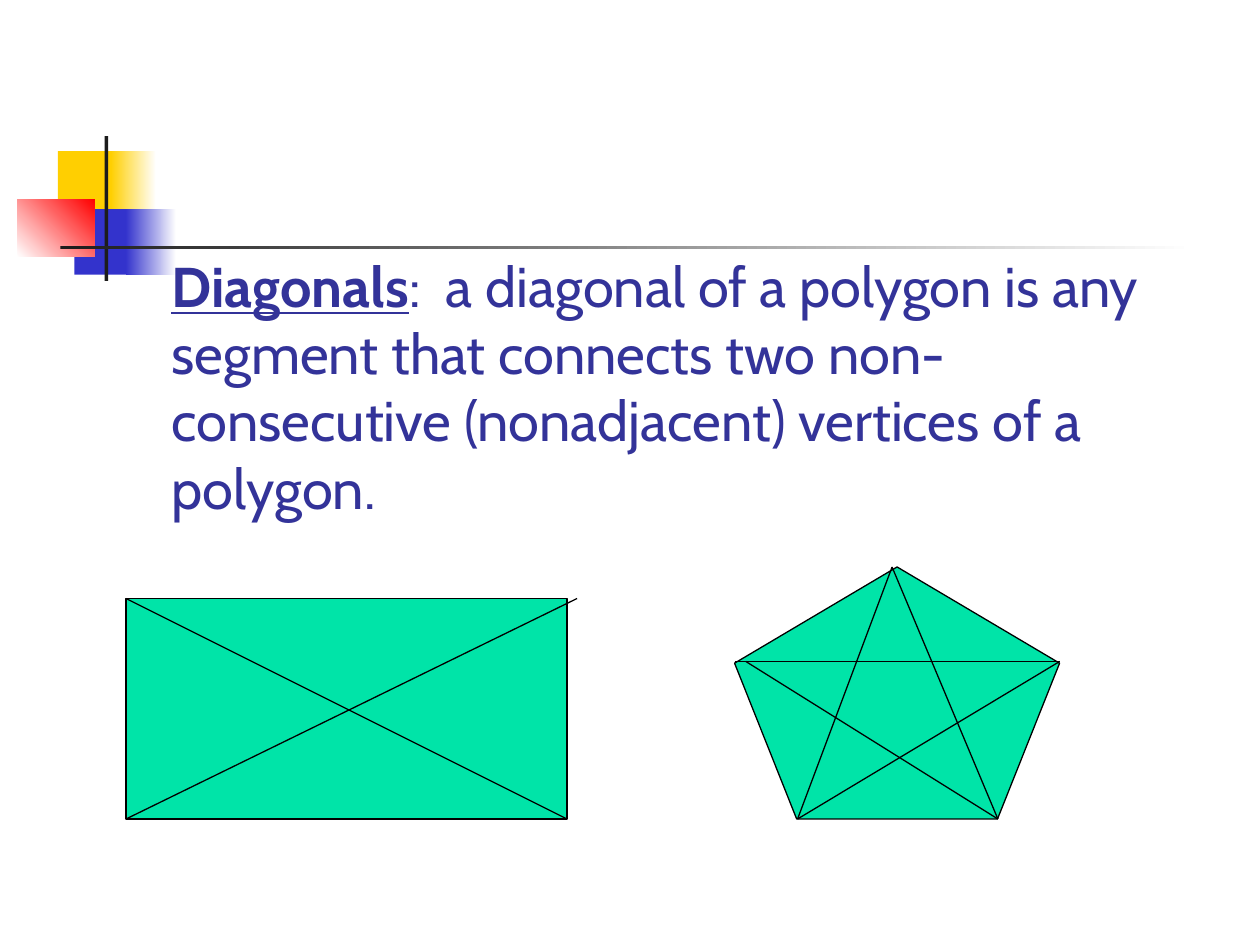
from lxml import etree
from pptx import Presentation
from pptx.dml.color import RGBColor
from pptx.enum import shapes, text
from pptx.oxml.ns import qn
from pptx.util import Inches, Pt


def colour(value):
    """Turn a hex string into a colour."""
    return RGBColor.from_string(value)


def add_block(slide, box, fills, angle=0, preset=shapes.MSO_SHAPE.RECTANGLE, outline=None):
    """Add a preset shape with one solid colour or two gradient colours."""
    block = slide.shapes.add_shape(preset, *map(Inches, box))
    block.shadow.inherit = False
    if len(fills) == 1:
        block.fill.solid()
        block.fill.fore_color.rgb = colour(fills[0])
    else:
        block.fill.gradient()
        block.fill.gradient_angle = angle
        for stop, value in zip(block.fill.gradient_stops, fills):
            stop.color.rgb = colour(value)
    if outline:
        block.line.color.rgb = colour(outline)
        block.line.width = Pt(0.75)
    else:
        block.line.fill.background()


def add_ornament(slide, box):
    """Draw the coloured squares and the crossing bars from the box's top left."""
    left, top, width, height = box
    parts = [
        ((0.32, 0.12, 0.48, 0.52), ["FFCF01"], 0),
        ((0.74, 0.12, 0.36, 0.52), ["FFCF01", "FFFFFF"], 0),
        ((0.45, 0.58, 0.46, 0.52), ["3333CC"], 0),
        ((0.86, 0.58, 0.4, 0.52), ["3333CC", "FFFFFF"], 0),
        ((0, 0.5, 0.61, 0.46), ["FFFFFF", "FF0000"], 45),
        ((0.69, 0, 0.03, height), ["1C1C1C"], 0),
        ((0.34, 0.87, width - 0.34, 0.03), ["1C1C1C", "FFFFFF"], 0),
    ]
    for (x, y, part_width, part_height), fills, angle in parts:
        add_block(slide, (left + x, top + y, part_width, part_height), fills, angle)


def add_definition(slide, box):
    """Place the definition in the title placeholder, in front of the ornament."""
    definition = slide.shapes.title
    slide.shapes.element.append(definition.element)
    definition.left, definition.top, definition.width, definition.height = map(Inches, box)
    frame = definition.text_frame
    frame.word_wrap = True
    frame.auto_size = text.MSO_AUTO_SIZE.NONE
    frame.vertical_anchor = text.MSO_ANCHOR.BOTTOM
    paragraph = frame.paragraphs[0]
    paragraph.alignment = text.PP_ALIGN.LEFT
    wording = [
        ("Diagonals", True),
        (":  a diagonal of a polygon is any segment that connects two "
         "non-consecutive (nonadjacent) vertices of a polygon.", False),
    ]
    for words, is_term in wording:
        run = paragraph.add_run()
        run.text = words
        run.font.name = "Cabin"
        run.font.size = Pt(32)
        run.font.bold = run.font.underline = is_term
        run.font.color.rgb = colour("333399")


def add_polygon(slide, box, preset, diagonals):
    """Draw a polygon and its diagonals, given as offsets from the box's top left."""
    left, top = box[:2]
    add_block(slide, box, ["00E4A8"], preset=preset, outline="000000")
    for x1, y1, x2, y2 in diagonals:
        ends = (left + x1, top + y1, left + x2, top + y2)
        diagonal = slide.shapes.add_connector(
            shapes.MSO_CONNECTOR.STRAIGHT, *map(Inches, ends))
        diagonal.line.color.rgb = colour("000000")
        diagonal.line.width = Pt(0.75)
        etree.SubElement(diagonal.element.spPr, qn("a:effectLst"))


def main():
    """Build and save the slide about diagonals."""
    deck = Presentation()
    deck.slide_width, deck.slide_height = Inches(10), Inches(7.5)
    slide = deck.slides.add_slide(deck.slide_layouts[5])
    add_ornament(slide, (0.14, 1.08, 9.34, 1.15))
    add_definition(slide, (1.26, 1.83, 8.52, 2.35))
    add_polygon(slide, (1, 4.75, 3.5, 1.75), shapes.MSO_SHAPE.RECTANGLE,
                [(0, 0, 3.5, 1.75), (0, 1.75, 3.58, 0)])
    add_polygon(slide, (5.83, 4.5, 2.58, 2), shapes.MSO_SHAPE.REGULAR_PENTAGON,
                [(0, 0.75, 2.58, 0.75), (0.09, 0.75, 2.09, 2), (1.25, 0, 0.5, 2),
                 (1.25, 0, 2.09, 2), (0.5, 2, 2.58, 0.75)])
    deck.save("out.pptx")


if __name__ == "__main__":
    main()
